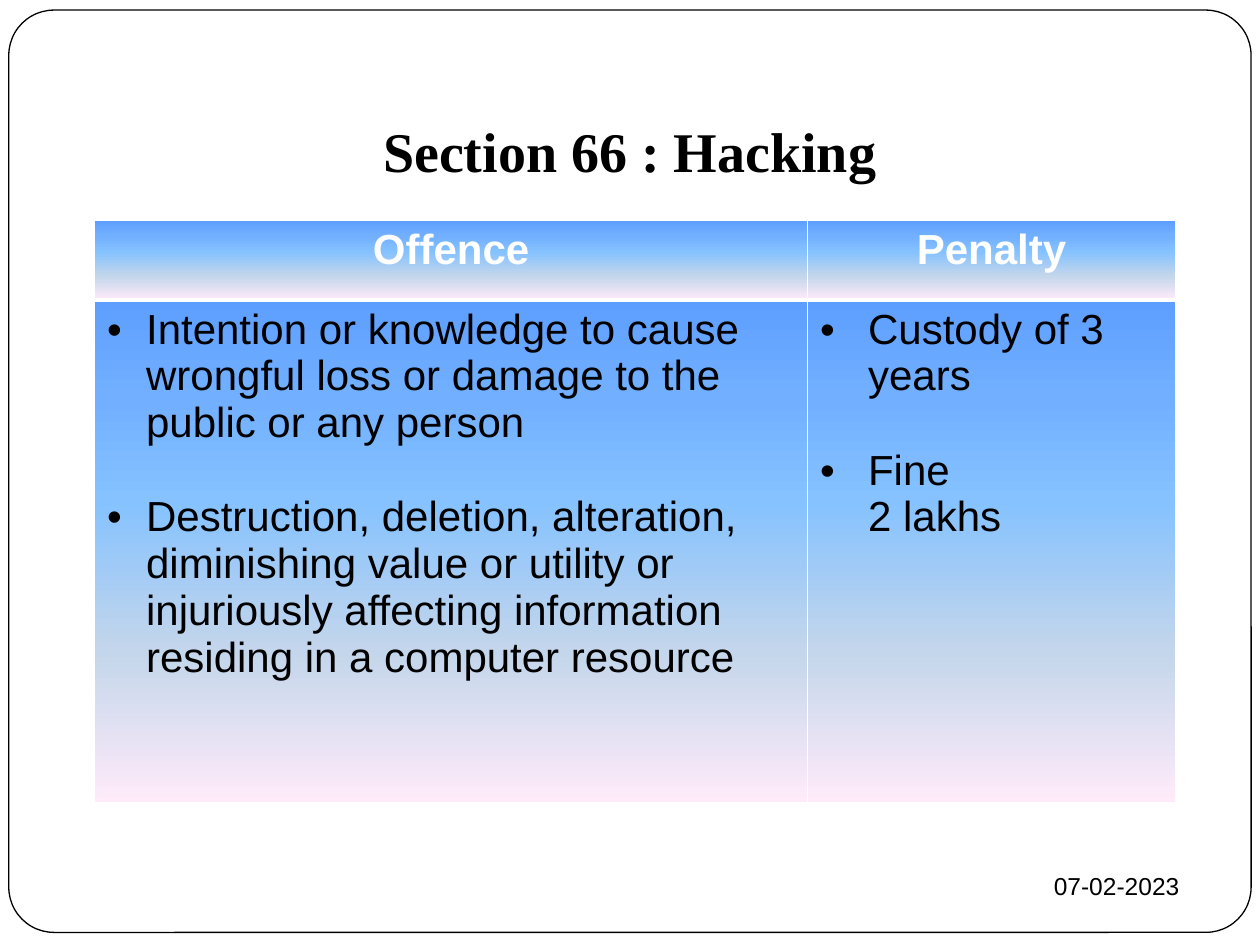
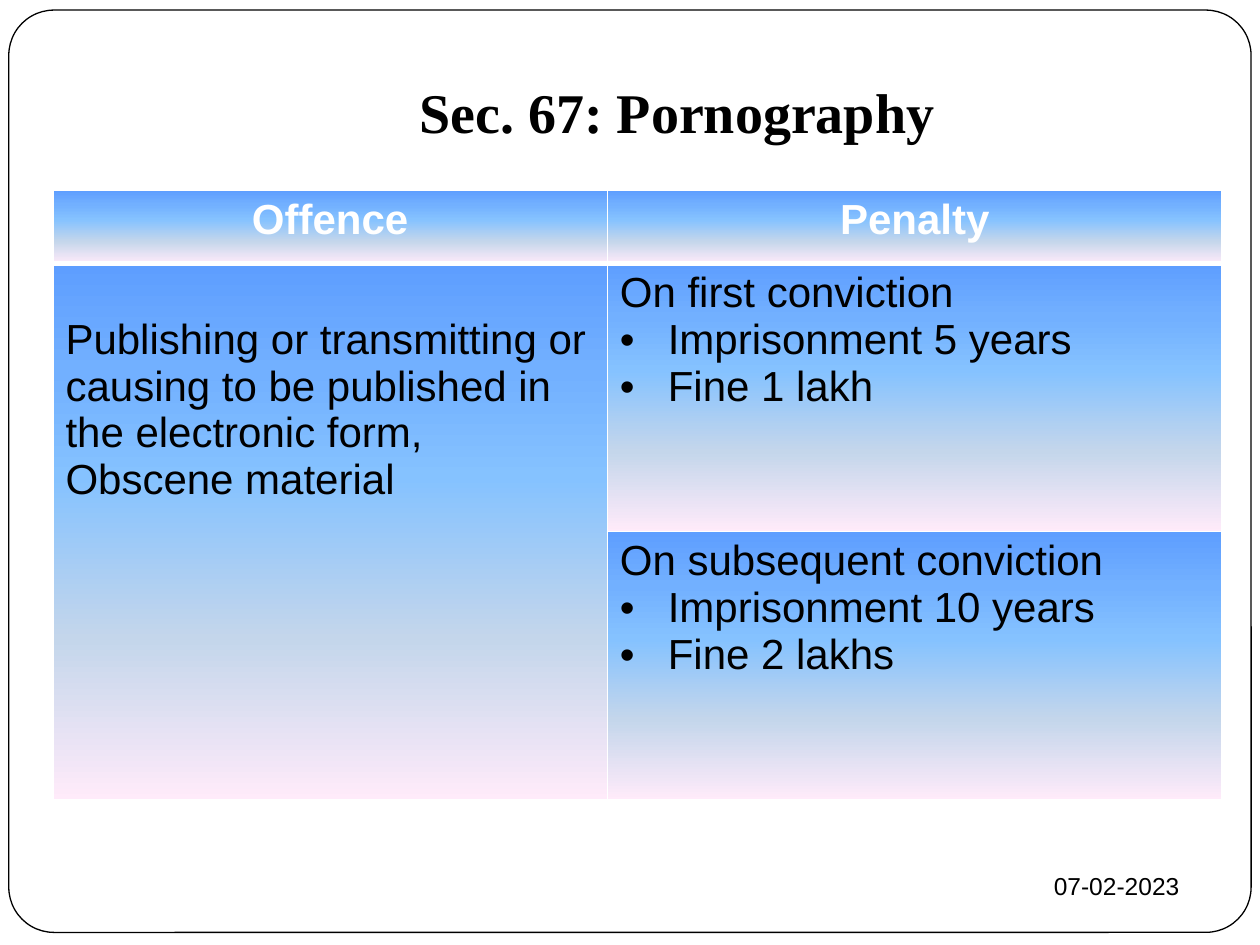
import pptx
import pptx.util
import pptx.dml.color
import pptx.enum.shapes
import pptx.enum.text
import pptx.oxml
import pptx.oxml.ns
from lxml import etree

Inches = pptx.util.Inches
Pt = pptx.util.Pt
ALIGN = pptx.enum.text.PP_ALIGN
ANCHOR = pptx.enum.text.MSO_ANCHOR

# Content: a body cell holds (text, has bullet, points of space before)
DATE = "07-02-2023"
HEADINGS = ["Offence", "Penalty"]
SLIDES = [
    {
        "title": "Section 66 : Hacking",
        "title_at": (0.5, 0.5, 9, 1.06),
        "table_at": (0.75, 1.75),
        "columns": [5.66, 2.92],
        "rows": [0.63, 3.99],
        "cells": {
            (1, 0): {"indent": 0.31, "lines": [
                ("Intention or knowledge to cause wrongful loss or damage "
                 "to the public or any person", True, 0),
                ("Destruction, deletion, alteration, diminishing value or utility "
                 "or injuriously affecting information residing in a computer "
                 "resource", True, 27)]},
            (1, 1): {"indent": 0.38, "lines": [
                ("Custody of 3 years", True, 0),
                ("Fine", True, 27),
                ("2 lakhs", False, 0)]},
        },
    },
    {
        "title": "Sec. 67: Pornography",
        "title_at": (1.75, 0.58, 7.25, 0.67),
        "table_at": (0.42, 1.51),
        "columns": [4.4, 4.88],
        "rows": [0.58, 2.13, 2.13],
        "merge": ((1, 0), (2, 0)),
        "cells": {
            (1, 0): {"indent": 0, "top": 0.42, "lines": [
                ("Publishing or transmitting or causing to be published in the "
                 "electronic form, Obscene material", False, 0)]},
            (1, 1): {"indent": 0.38, "plain_indent": 0, "lines": [
                ("On first conviction", False, 0),
                ("Imprisonment 5 years", True, 0),
                ("Fine 1 lakh", True, 0)]},
            (2, 1): {"indent": 0.38, "plain_indent": 0, "lines": [
                ("On subsequent conviction", False, 0),
                ("Imprisonment 10 years", True, 0),
                ("Fine 2 lakhs", True, 0)]},
        },
    },
]

# Shared look
BLACK, WHITE = "000000", "FFFFFF"
GRADIENT = [(0, "5E9EFF"), (20, "72B0FF"), (40, "85C2FF"), (70, "C4D6EB"), (100, "FFEBFA")]
TITLE_FONT = {"name": "Times New Roman", "size": Pt(32), "bold": True, "color": BLACK}
DATE_FONT = {"name": "Arial", "size": Pt(14), "bold": False, "color": BLACK}
HEADING_FONT = {"name": "Arial", "size": Pt(24), "bold": True, "color": WHITE}
BODY_FONT = {"name": "Arial", "size": Pt(24), "bold": False, "color": BLACK}
FRAME_AT = (0.07, 0.08, 9.86, 7.32)
DATE_AT = (6.75, 6.77, 2.71, 0.52)


def rgb(code):
    return pptx.dml.color.RGBColor.from_string(code)


def lengths(values):
    return [Inches(value) for value in values]


def add_xml(parent, markup):
    declaration = pptx.oxml.ns.nsdecls("a")
    fragment = pptx.oxml.parse_xml(f"<a:list {declaration}>{markup}</a:list>")
    for child in list(fragment):
        parent.append(child)
    etree.cleanup_namespaces(parent)


def write(para, text, font, align):
    para.alignment = align
    span = para.add_run()
    span.text = text
    for name, value in font.items():
        if name == "color":
            span.font.color.rgb = rgb(value)
        else:
            setattr(span.font, name, value)


def format_box(box, at, anchor, bottom):
    box.left, box.top, box.width, box.height = lengths(at)
    values = {"word_wrap": True, "auto_size": pptx.enum.text.MSO_AUTO_SIZE.NONE,
              "vertical_anchor": anchor, "margin_left": Inches(0.1),
              "margin_right": Inches(0.1), "margin_top": Inches(0.05),
              "margin_bottom": Inches(bottom)}
    for name, value in values.items():
        setattr(box.text_frame, name, value)


def add_frame(deck, page):
    """Move the rounded border to the master, behind everything."""
    frame = page.shapes.add_shape(
        pptx.enum.shapes.MSO_SHAPE.ROUNDED_RECTANGLE, *lengths(FRAME_AT))
    frame.adjustments[0] = 0.049
    frame.shadow.inherit = False
    frame.fill.solid()
    frame.fill.fore_color.rgb = rgb(WHITE)
    frame.line.color.rgb = rgb(BLACK)
    frame.line.width = Pt(0.75)
    deck.slide_master.shapes.element.insert(2, frame.element)


def style_cell(cell, row):
    """White borders, thick below the header, and the gradient."""
    widths = {"L": 1, "R": 1, "T": 3 if row == 1 else 1, "B": 3 if row == 0 else 1}
    borders = "".join(
        f'<a:ln{side} w="{Pt(width)}"><a:solidFill><a:srgbClr val="{WHITE}"/>'
        f'</a:solidFill></a:ln{side}>' for side, width in widths.items())
    stops = "".join(f'<a:gs pos="{place * 1000}"><a:srgbClr val="{code}"/></a:gs>'
                    for place, code in GRADIENT)
    cell.margin_left = cell.margin_right = Inches(0.1)
    cell.margin_top = cell.margin_bottom = Inches(0.05)
    add_xml(cell._tc.get_or_add_tcPr(),
            f'{borders}<a:gradFill><a:gsLst>{stops}</a:gsLst>'
            '<a:lin ang="5400000" scaled="0"/></a:gradFill>')


def fill_body(cell, content):
    indent = content["indent"]
    if "top" in content:
        cell.margin_top = Inches(content["top"])
    for number, (text, bullet, space) in enumerate(content["lines"]):
        frame = cell.text_frame
        para = frame.add_paragraph() if number else frame.paragraphs[0]
        para.space_before = Pt(space)
        write(para, text, BODY_FONT, ALIGN.LEFT)
        settings = para._p.get_or_add_pPr()
        left = indent if bullet else content.get("plain_indent", indent)
        settings.set("marL", str(Inches(left)))
        settings.set("indent", str(-Inches(indent) if bullet else 0))
        add_xml(settings,
                f'<a:buClr><a:srgbClr val="{BLACK}"/></a:buClr>'
                '<a:buFont typeface="Arial"/><a:buChar char="•"/>'
                if bullet else "<a:buNone/>")


def add_offence_table(page, content):
    columns, rows = content["columns"], content["rows"]
    table = page.shapes.add_table(
        len(rows), len(columns), *lengths(content["table_at"]),
        Inches(sum(columns)), Inches(sum(rows))).table
    table.first_row = table.horz_banding = False
    for column, width in zip(table.columns, columns):
        column.width = Inches(width)
    for row, height in zip(table.rows, rows):
        row.height = Inches(height)
    for row in range(len(rows)):
        for column in range(len(columns)):
            style_cell(table.cell(row, column), row)
    for column, heading in enumerate(HEADINGS):
        write(table.cell(0, column).text_frame.paragraphs[0],
              heading, HEADING_FONT, ALIGN.CENTER)
    if "merge" in content:
        first, last = content["merge"]
        table.cell(*first).merge(table.cell(*last))
    for place, body in content["cells"].items():
        fill_body(table.cell(*place), body)


def main():
    deck = pptx.Presentation()
    deck.slide_width, deck.slide_height = Inches(10), Inches(7.5)
    for number, content in enumerate(SLIDES):
        page = deck.slides.add_slide(deck.slide_layouts[5])
        if number == 0:
            add_frame(deck, page)
        # Title
        title = page.shapes.title
        format_box(title, content["title_at"], ANCHOR.BOTTOM, 0.1)
        write(title.text_frame.paragraphs[0], content["title"], TITLE_FONT, ALIGN.CENTER)
        # Date
        date = page.shapes.add_textbox(*lengths(DATE_AT))
        format_box(date, DATE_AT, ANCHOR.MIDDLE, 0.05)
        write(date.text_frame.paragraphs[0], DATE, DATE_FONT, ALIGN.RIGHT)
        # Table
        add_offence_table(page, content)
    deck.save("out.pptx")


if __name__ == "__main__":
    main()
